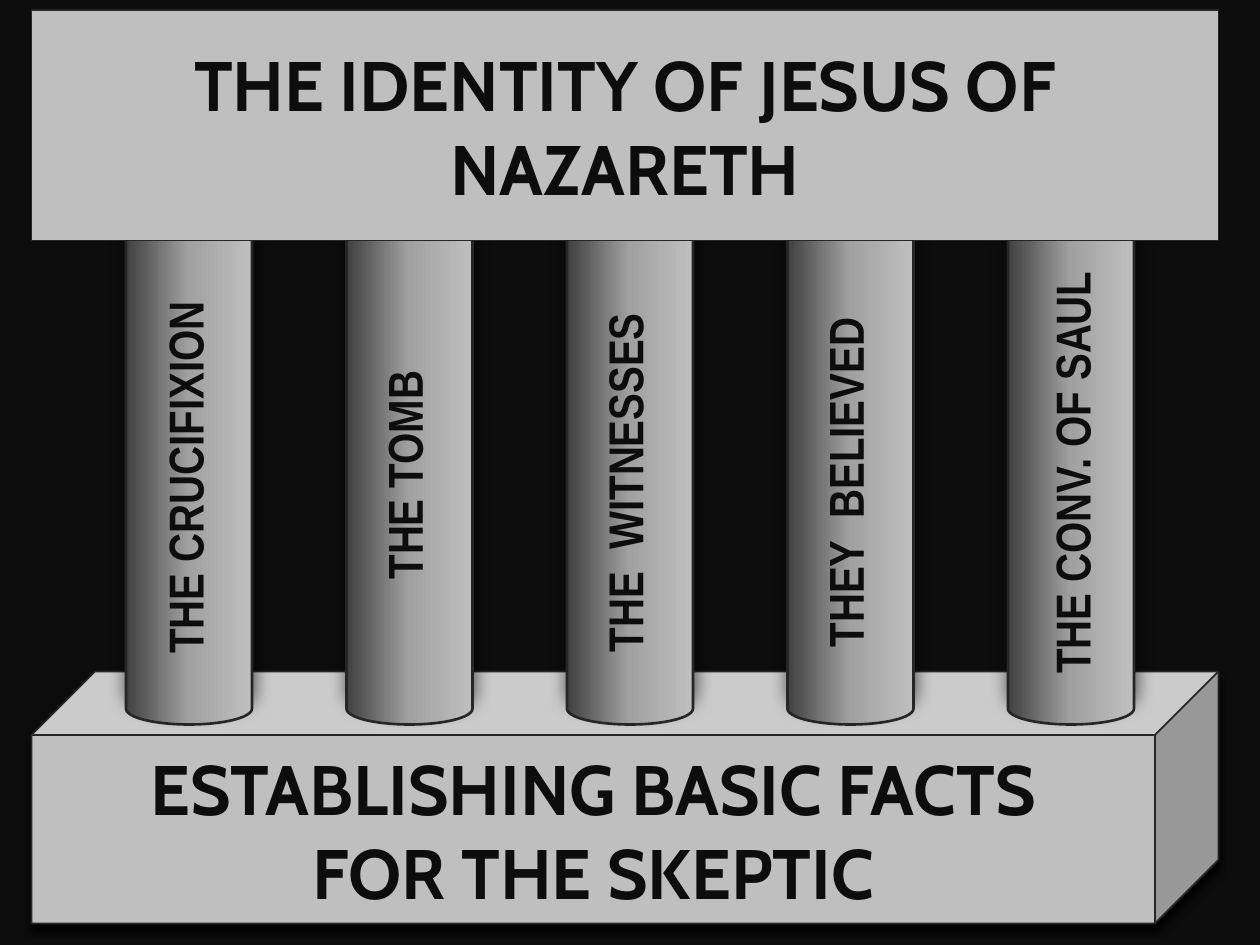
import pptx
import pptx.util
import pptx.dml.color
import pptx.enum.shapes
import pptx.enum.text
import pptx.oxml
import pptx.oxml.ns

Inches = pptx.util.Inches
Pt = pptx.util.Pt
MSO_SHAPE = pptx.enum.shapes.MSO_SHAPE
NS = pptx.oxml.ns.nsdecls("a")
INK, EDGE, STONE = "0D0D0D", "262626", "BFBFBF"
PILLAR_STOPS = [(0, "404040"), (50, "A1A1A1"), (100, STONE)]


def rgb(value):
    return pptx.dml.color.RGBColor.from_string(value)


def write(sp, text, size=40, font="Cabin", color=INK):
    tf = sp.text_frame
    tf.word_wrap = True
    tf.auto_size = pptx.enum.text.MSO_AUTO_SIZE.NONE
    tf.vertical_anchor = pptx.enum.text.MSO_ANCHOR.MIDDLE
    p = tf.paragraphs[0]
    p.text = text
    p.alignment = pptx.enum.text.PP_ALIGN.CENTER
    for r in p.runs:
        r.font.size, r.font.name, r.font.bold = Pt(size), font, True
        r.font.color.rgb = rgb(color)


prs = pptx.Presentation()
prs.slide_width, prs.slide_height = Inches(10), Inches(7.5)
s = prs.slides.add_slide(prs.slide_layouts[5])

# Dark backdrop
backdrop = s.shapes.add_shape(MSO_SHAPE.RECTANGLE, 0, 0, prs.slide_width, prs.slide_height)
backdrop.shadow.inherit = False
backdrop.fill.solid()
backdrop.fill.fore_color.rgb = rgb(INK)
backdrop.line.fill.background()

# Base block
base = s.shapes.add_shape(MSO_SHAPE.CUBE, Inches(0.25), Inches(5.33), Inches(9.42), Inches(2))
base.adjustments[0] = 0.252
write(base, "ESTABLISHING BASIC FACTS\nFOR THE SKEPTIC")

# Pillars, from right to left
pillars = []
for i in reversed(range(5)):
    sp = s.shapes.add_shape(MSO_SHAPE.CAN, Inches(1 + 1.75 * i), Inches(1.33), Inches(1), Inches(4.42))
    stops = "".join(f'<a:gs pos="{pos * 1000}"><a:srgbClr val="{c}"/></a:gs>' for pos, c in PILLAR_STOPS)
    sp.element.spPr.append(pptx.oxml.parse_xml(
        f'<a:gradFill {NS} rotWithShape="1"><a:gsLst>{stops}</a:gsLst><a:lin ang="0" scaled="0"/></a:gradFill>'))
    sp.line.color.rgb = rgb(EDGE)
    sp.line.width = Pt(1.5)
    pillars.append(sp)

# Top block: the title, shaped as a cube in front of the pillars
title = s.shapes.title
title.element.getparent().append(title.element)
title.left, title.top, title.width, title.height = Inches(0.25), Inches(0.08), Inches(9.42), Inches(1.83)
title.element.spPr.append(pptx.oxml.parse_xml(
    f'<a:prstGeom {NS} prst="cube"><a:avLst><a:gd name="adj" fmla="val 25200"/></a:avLst></a:prstGeom>'))
write(title, "THE IDENTITY OF JESUS OF NAZARETH")

for sp in (base, title):
    sp.fill.solid()
    sp.fill.fore_color.rgb = rgb(STONE)
    sp.line.color.rgb = rgb(EDGE)
    sp.line.width = Pt(1)

# Shadows: opacity in percent, blur and distance in points, direction in degrees
for sp, alpha, blur, dist, angle in [(base, 100, 4, 4, 90)] + [(sp, 62, 10, 8, 272) for sp in pillars]:
    sp.shadow.inherit = False
    effects = sp.element.spPr.find(pptx.oxml.ns.qn("a:effectLst"))
    effects.append(pptx.oxml.parse_xml(
        f'<a:outerShdw {NS} blurRad="{Pt(blur)}" dist="{Pt(dist)}" dir="{angle * 60000}" '
        f'algn="ctr" rotWithShape="0"><a:srgbClr val="000000"><a:alpha val="{alpha * 1000}"/>'
        '</a:srgbClr></a:outerShdw>'))

# Pillar labels, reading upwards: text, centre x, centre y
for text, x, y in [
    ("THE CRUCIFIXION", 1.46, 3.79),
    ("THE TOMB", 3.2, 3.77),
    ("THE  WITNESSES", 4.95, 3.83),
    ("THEY  BELIEVED", 6.7, 3.83),
    ("THE CONV. OF SAUL", 8.5, 3.75),
]:
    width, height = 3.83, 0.75
    sp = s.shapes.add_textbox(Inches(x - width / 2), Inches(y - height / 2), Inches(width), Inches(height))
    sp.rotation = 270
    write(sp, text, size=28, font="Arial Narrow")

prs.save("out.pptx")
